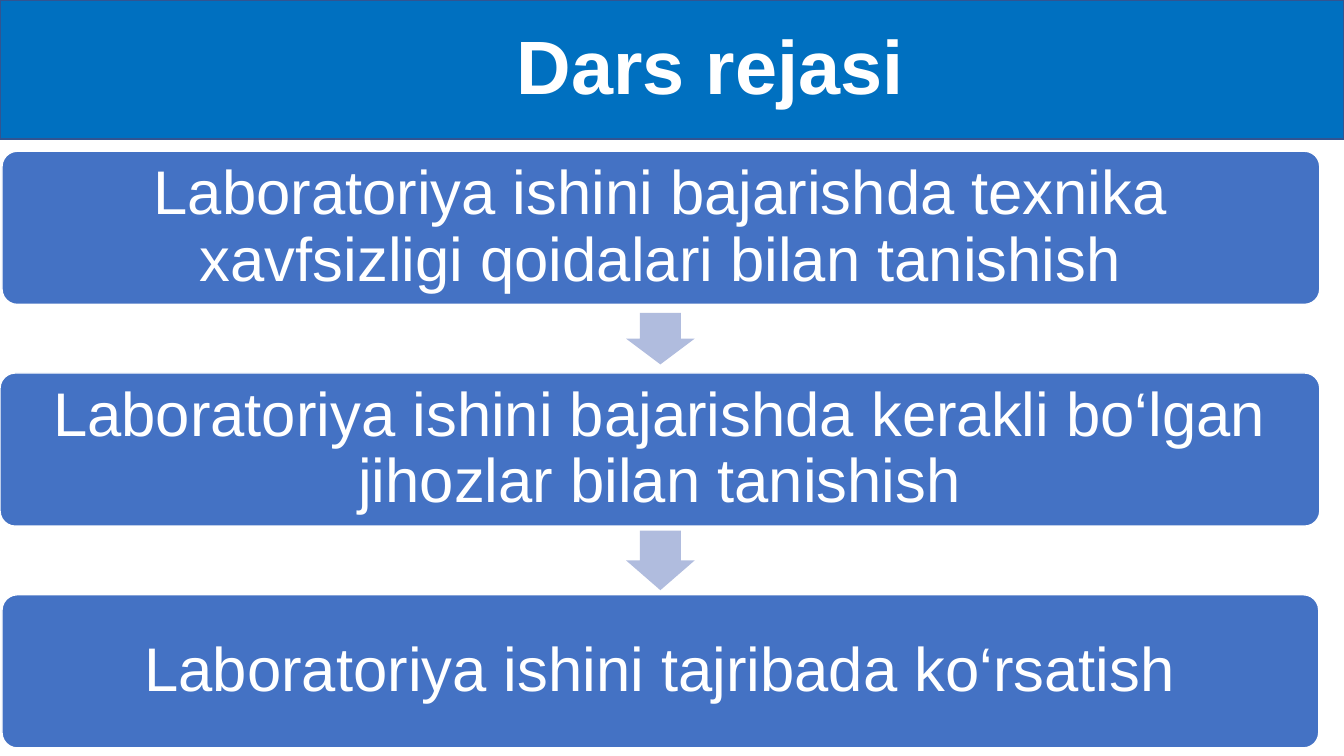
from dataclasses import dataclass
from pptx import Presentation
from pptx.dml.color import RGBColor
from pptx.enum.shapes import MSO_SHAPE
from pptx.enum.text import MSO_ANCHOR, MSO_AUTO_SIZE, PP_ALIGN
from pptx.util import Inches, Pt

TITLE = "Dars rejasi"
# text, left edge, width
STEPS = [
    ("Laboratoriya ishini bajarishda texnika xavfsizligi qoidalari bilan tanishish", 0.02, 13.07),
    ("Laboratoriya ishini bajarishda kerakli bo‘lgan jihozlar bilan tanishish", 0, 13.09),
    ("Laboratoriya ishini tajribada ko‘rsatish", 0.02, 13.06),
]
ARROWS = [0.51, 0.59]  # lengths

WIDE, HIGH = 13.33, 7.5
HEAD = 1.38
TOP, STEP, GAP = 1.5, 1.52, 0.68
MID = 6.55


@dataclass(frozen=True)
class Theme:
    font: str = "Arial"
    head: str = "0070C0"
    edge: str = "325491"
    step: str = "4472C4"
    arrow: str = "B0BCDE"
    white: str = "FFFFFF"
    big: int = 54
    body: int = 44


theme = Theme()


def rgb(code):
    return RGBColor.from_string(code)


def paint(shape, fill, line=None):
    shape.shadow.inherit = False
    shape.fill.solid()
    shape.fill.fore_color.rgb = rgb(fill)
    if line:
        shape.line.color.rgb = rgb(line)
        shape.line.width = Pt(1)
    else:
        shape.line.fill.background()


def place(shape, left, top, width, height):
    shape.left, shape.top = Inches(left), Inches(top)
    shape.width, shape.height = Inches(width), Inches(height)


def write(shape, text, size, bold=False):
    frame = shape.text_frame
    frame.text = text
    frame.word_wrap = True
    frame.auto_size = MSO_AUTO_SIZE.NONE
    frame.vertical_anchor = MSO_ANCHOR.MIDDLE
    para = frame.paragraphs[0]
    para.alignment = PP_ALIGN.CENTER
    para.line_spacing = 0.9
    font = para.font
    font.name, font.size, font.bold = theme.font, Pt(size), bold
    font.color.rgb = rgb(theme.white)
    return frame


def add(slide, kind, left, top, width, height):
    return slide.shapes.add_shape(
        kind, Inches(left), Inches(top), Inches(width), Inches(height))


def add_step(slide, row, text, left, width):
    box = add(slide, MSO_SHAPE.ROUNDED_RECTANGLE,
              left, TOP + row * (STEP + GAP), width, STEP)
    box.adjustments[0] = 0.1
    paint(box, theme.step, theme.white)
    frame = write(box, text, theme.body)
    frame.margin_left = frame.margin_right = Inches(0.18)
    frame.margin_top = frame.margin_bottom = Inches(0.18)


def add_arrow(slide, row, size):
    """Centre an arrow in the gap below the step of this row."""
    top = TOP + row * (STEP + GAP) + STEP + (GAP - size) / 2
    arrow = add(slide, MSO_SHAPE.DOWN_ARROW, MID - GAP / 2, top, GAP, size)
    arrow.adjustments[0], arrow.adjustments[1] = 0.6, 0.5
    paint(arrow, theme.arrow)


def main():
    deck = Presentation()
    deck.slide_width, deck.slide_height = Inches(WIDE), Inches(HIGH)
    slide = deck.slides.add_slide(deck.slide_layouts[5])

    title = slide.shapes.title
    place(title, 0, 0, WIDE, HEAD)
    paint(title, theme.head, theme.edge)
    frame = write(title, TITLE, theme.big, bold=True)
    frame.margin_left = Inches(0.86)

    for row, step in enumerate(STEPS):
        add_step(slide, row, *step)
    for row, size in enumerate(ARROWS):
        add_arrow(slide, row, size)
    deck.save("out.pptx")


if __name__ == "__main__":
    main()
